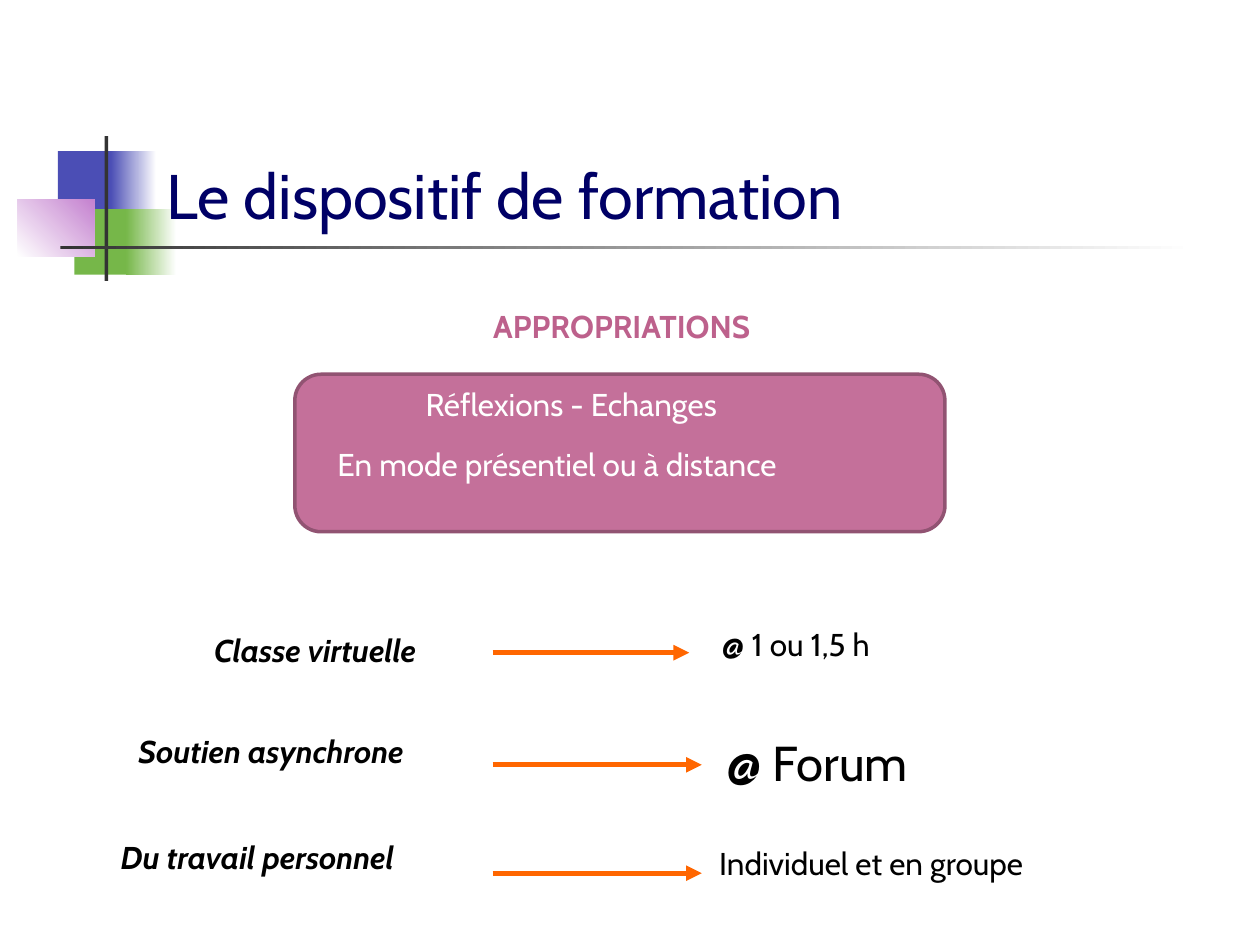
from dataclasses import dataclass
from typing import Optional

from lxml.etree import SubElement
from pptx import Presentation
from pptx.dml.color import RGBColor
from pptx.enum.shapes import MSO_CONNECTOR, MSO_SHAPE
from pptx.enum.text import MSO_ANCHOR as Anchor, MSO_AUTO_SIZE as AutoSize, PP_ALIGN as Align
from pptx.oxml.ns import qn
from pptx.util import Inches, Pt


@dataclass(frozen=True)
class Theme:
    font: str = "Cabin"
    title: str = "000066"
    heading: str = "BD618C"
    panel: str = "C4709A"
    panel_line: str = "915372"
    arrow: str = "FF6600"
    ink: str = "000000"
    white: str = "FFFFFF"
    blue: str = "4B4EB5"
    green: str = "76B749"
    pink: str = "C481CF"
    bar: str = "333333"
    title_size: int = 36
    large_size: int = 28
    body_size: int = 18


THEME = Theme()


@dataclass(frozen=True)
class Box:
    left: float
    top: float
    width: float
    height: float

    def lengths(self) -> tuple:
        """Return the four lengths for a new shape."""
        return tuple(Inches(v) for v in (self.left, self.top, self.width, self.height))


@dataclass(frozen=True)
class Block:
    box: Box
    color: str
    fade_to: Optional[str] = None
    angle: int = 0


@dataclass(frozen=True)
class Label:
    text: str
    box: Box
    color: str = THEME.ink
    size: int = THEME.body_size
    bold: bool = False
    italic: bool = False
    align: Align = Align.LEFT
    anchor: Anchor = Anchor.TOP


@dataclass(frozen=True)
class Activity:
    name: Label
    arrow_y: float
    arrow_end: float
    detail: Label


ORNAMENT = (
    Block(Box(0.46, 1.2, 0.48, 0.52), THEME.blue),
    Block(Box(0.88, 1.2, 0.36, 0.52), THEME.blue, THEME.white),
    Block(Box(0.59, 1.66, 0.46, 0.52), THEME.green),
    Block(Box(1, 1.66, 0.4, 0.52), THEME.green, THEME.white),
    Block(Box(0.14, 1.58, 0.61, 0.46), THEME.white, THEME.pink, 45),
    Block(Box(0.83, 1.08, 0.03, 1.15), THEME.bar),
    Block(Box(0.48, 1.95, 9, 0.03), THEME.bar, THEME.white),
)
TITLE = Label("Le dispositif de formation", Box(1.22, 1.21, 8.7, 0.67), THEME.title,
              THEME.title_size, anchor=Anchor.MIDDLE)
HEADING = Label("APPROPRIATIONS", Box(2.32, 2.39, 5.23, 0.5), THEME.heading,
                bold=True, align=Align.CENTER)
PANEL = Box(2.34, 2.97, 5.16, 1.25)
PANEL_LABELS = (
    Label("Réflexions - Echanges", Box(3.28, 3.01, 3.23, 0.5), THEME.white),
    Label("En mode présentiel ou à distance", Box(2.58, 3.48, 4.7, 0.5), THEME.white),
)
ARROW_START = 3.91
ACTIVITIES = (
    Activity(Label("Classe virtuelle", Box(1.6, 4.96, 2.39, 0.5), bold=True, italic=True),
             5.18, 5.47, Label("@ 1 ou 1,5 h", Box(5.63, 4.91, 1.66, 0.4))),
    Activity(Label("Soutien asynchrone", Box(1, 5.76, 3.04, 0.5), bold=True, italic=True),
             6.07, 5.57, Label("@ Forum", Box(5.63, 5.76, 1.71, 0.57), size=THEME.large_size,
                               align=Align.CENTER, anchor=Anchor.MIDDLE)),
    Activity(Label("Du travail personnel", Box(0.86, 6.6, 3.2, 0.5), bold=True, italic=True),
             6.93, 5.57, Label("Individuel et en groupe", Box(5.61, 6.6, 3.92, 0.5),
                               anchor=Anchor.MIDDLE)),
)


def rgb(color: str) -> RGBColor:
    """Turn a hex colour into an RGBColor."""
    return RGBColor.from_string(color)


def write(sp, label: Label) -> None:
    """Put the label's text into a shape and format it."""
    tf = sp.text_frame
    tf.word_wrap = True
    tf.auto_size = AutoSize.NONE
    tf.vertical_anchor = label.anchor
    p = tf.paragraphs[0]
    p.text = label.text
    p.alignment = label.align
    font = p.font
    font.name = THEME.font
    font.size = Pt(label.size)
    font.bold = label.bold
    font.italic = label.italic
    font.color.rgb = rgb(label.color)


def add_label(s, label: Label) -> None:
    """Add a text box for a label."""
    write(s.shapes.add_textbox(*label.box.lengths()), label)


def add_block(s, block: Block) -> None:
    """Add a borderless rectangle with a solid or fading fill."""
    sp = s.shapes.add_shape(MSO_SHAPE.RECTANGLE, *block.box.lengths())
    sp.shadow.inherit = False
    sp.line.fill.background()
    if block.fade_to is None:
        sp.fill.solid()
        sp.fill.fore_color.rgb = rgb(block.color)
        return
    sp.fill.gradient()
    sp.fill.gradient_angle = block.angle
    for stop, color in zip(sp.fill.gradient_stops, (block.color, block.fade_to)):
        stop.color.rgb = rgb(color)


def add_title(s, label: Label) -> None:
    """Format the title placeholder and bring it to the front."""
    sp = s.shapes.title
    sp.left, sp.top, sp.width, sp.height = label.box.lengths()
    write(sp, label)
    sp.element.getparent().append(sp.element)


def add_panel(s, box: Box) -> None:
    """Add the rounded panel."""
    sp = s.shapes.add_shape(MSO_SHAPE.ROUNDED_RECTANGLE, *box.lengths())
    sp.shadow.inherit = False
    sp.fill.solid()
    sp.fill.fore_color.rgb = rgb(THEME.panel)
    sp.line.color.rgb = rgb(THEME.panel_line)
    sp.line.width = Pt(2)


def add_arrow(s, y: float, end: float) -> None:
    """Add a horizontal arrow pointing right."""
    cx = s.shapes.add_connector(MSO_CONNECTOR.STRAIGHT, Inches(ARROW_START), Inches(y),
                                Inches(end), Inches(y))
    cx.line.color.rgb = rgb(THEME.arrow)
    cx.line.width = Pt(3)
    SubElement(cx.line._get_or_add_ln(), qn("a:tailEnd"), type="triangle")
    SubElement(cx.element.spPr, qn("a:effectLst"))


def main() -> None:
    """Build the slide and save it."""
    prs = Presentation()
    prs.slide_width, prs.slide_height = Inches(10), Inches(7.5)
    s = prs.slides.add_slide(prs.slide_layouts[5])
    for block in ORNAMENT:
        add_block(s, block)
    add_title(s, TITLE)
    add_label(s, HEADING)
    add_panel(s, PANEL)
    for label in PANEL_LABELS:
        add_label(s, label)
    for activity in ACTIVITIES:
        add_label(s, activity.name)
        add_arrow(s, activity.arrow_y, activity.arrow_end)
        add_label(s, activity.detail)
    prs.save("out.pptx")


if __name__ == "__main__":
    main()
